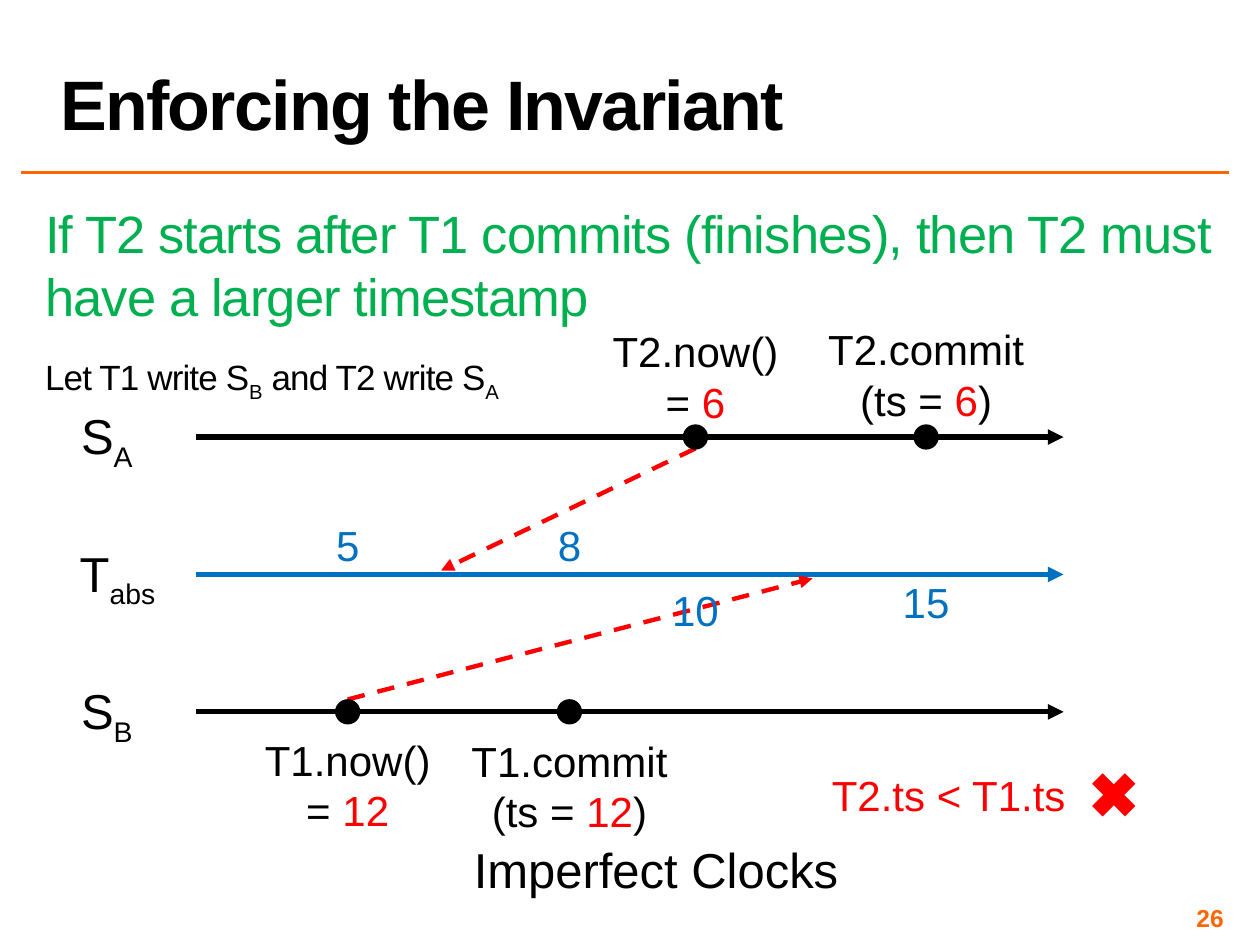
from lxml.etree import SubElement
from pptx import Presentation
from pptx.dml.color import RGBColor
from pptx.enum.dml import MSO_LINE
from pptx.enum.shapes import MSO_CONNECTOR, MSO_SHAPE
from pptx.enum.text import MSO_ANCHOR, PP_ALIGN
from pptx.oxml.ns import qn
from pptx.util import Cm, Pt

BLACK, RED, BLUE, GREEN, ORANGE = "000000", "FF0000", "0070C0", "00B050", "FF6600"
INSET = 0.1


def rgb(value):
    return RGBColor.from_string(value)


def add_text(slide, box, paragraphs, size, color=BLACK, align=PP_ALIGN.CENTER,
             wrap=False, bold=False, tracking=0, anchor=MSO_ANCHOR.TOP, inset=None):
    """Each paragraph is a list of runs: (text, colour or None, is subscript)."""
    frame = slide.shapes.add_textbox(*map(Cm, box)).text_frame
    frame.word_wrap = wrap
    frame.vertical_anchor = anchor
    if inset is not None:
        frame.margin_left = frame.margin_right = Cm(inset)
        frame.margin_top = frame.margin_bottom = Cm(inset)
    for index, pieces in enumerate(paragraphs):
        paragraph = frame.add_paragraph() if index else frame.paragraphs[0]
        paragraph.alignment = align
        for words, run_color, subscript in pieces:
            run = paragraph.add_run()
            run.text = words
            run.font.name, run.font.size, run.font.bold = "Arial", Pt(size), bold
            run.font.color.rgb = rgb(run_color or color)
            properties = run._r.get_or_add_rPr()
            if subscript:
                properties.set("baseline", "-25000")
            if tracking:
                properties.set("spc", str(int(tracking * 100)))
    return frame


def plain(words):
    return [[(words, None, False)]]


def add_line(slide, start, end, color, width, arrow=False, dashed=False):
    connector = slide.shapes.add_connector(
        MSO_CONNECTOR.STRAIGHT, *map(Cm, (*start, *end)))
    connector.line.color.rgb = rgb(color)
    connector.line.width = Pt(width)
    if dashed:
        connector.line.dash_style = MSO_LINE.DASH
    if arrow:
        SubElement(connector.line._get_or_add_ln(), qn("a:tailEnd"), type="triangle")
    SubElement(connector._element.spPr, qn("a:effectLst"))


def add_solid(slide, kind, box, color):
    shape = slide.shapes.add_shape(kind, *map(Cm, box))
    shape.shadow.inherit = False
    shape.fill.solid()
    shape.fill.fore_color.rgb = rgb(color)
    shape.line.fill.background()


def build_header(slide, left, top, width, height):
    title = add_text(slide, (left, top, width, height), plain("Enforcing the Invariant"),
                     40, align=PP_ALIGN.LEFT, wrap=True, bold=True, tracking=-1,
                     anchor=MSO_ANCHOR.BOTTOM)
    title.paragraphs[0].line_spacing = 0.8
    rule_y = top + height + 0.46
    add_line(slide, (left - 0.54, rule_y), (left + width, rule_y), ORANGE, 2)


def build_statement(slide, left, top, width, height):
    invariant = ("If T2 starts after T1 commits (finishes), "
                 "then T2 must have a larger timestamp")
    writes = [("Let T1 write S", None, False), ("B", None, True),
              (" and T2 write S", None, False), ("A", None, True)]
    frame = add_text(slide, (left, top, width, height), plain(invariant) + [writes],
                     20, align=PP_ALIGN.LEFT, wrap=True, tracking=-0.5, inset=INSET)
    for paragraph, before in zip(frame.paragraphs, (30, 8)):
        paragraph.space_before, paragraph.space_after = Pt(before), Pt(8)
    lead = frame.paragraphs[0].runs[0].font
    lead.size, lead.color.rgb = Pt(30), rgb(GREEN)


def build_timelines(slide, left, top, width, height):
    server_a, absolute, server_b = (top + height * step / 2 for step in range(3))

    # Lanes with their names
    lanes = [(absolute, "T", "abs", 2.08, BLUE), (server_b, "S", "B", 1.65, BLACK),
             (server_a, "S", "A", 1.65, BLACK)]
    for y, letter, index, name_width, color in lanes:
        add_line(slide, (left, y), (left + width, y), color, 3, arrow=True)
        add_text(slide, (left - 2.63, y - 0.75, name_width, 1.45),
                 [[(letter, None, False), (index, None, True)]], 28)

    # Dashed arrows from each now() to the absolute time its clock shows
    for event_x, event_y, clock_x, clock_y in (
            (3.05, server_b - 0.25, 12.42, absolute + 0.08),
            (10.06, server_a + 0.23, 4.93, absolute - 0.08)):
        add_line(slide, (left + event_x, event_y), (left + clock_x, clock_y),
                 RED, 2.5, arrow=True, dashed=True)

    # Events: offset, lane, call, text around the timestamp, label rise, true time, its rise
    dot = 0.51
    events = [
        (3.05, server_b, "T1.now()", ("= ", "12", ""), 0.33, "5", -1.24),
        (7.52, server_b, "T1.commit", ("(ts = ", "12", ")"), 0.35, "8", -1.24),
        (10.06, server_a, "T2.now()", ("= ", "6", ""), -2.37, "10", 0.08),
        (14.71, server_a, "T2.commit", ("(ts = ", "6", ")"), -2.41, "15", -0.08),
    ]
    for offset, y, call, (before, stamp, after), rise, time, time_rise in events:
        x = left + offset
        add_solid(slide, MSO_SHAPE.OVAL, (x - dot / 2, y - dot / 2, dot, dot), BLACK)
        reading = [(before, None, False), (stamp, RED, False)]
        if after:
            reading.append((after, None, False))
        add_text(slide, (x - 2.25, y + rise, 4.5, 2.31), plain(call) + [reading], 24)
        add_text(slide, (x - 0.74, absolute + time_rise, 1.48, 1.27),
                 plain(time), 24, BLUE)


def build_verdict(slide, left, top, width, height):
    add_text(slide, (left, top, width - height, height), plain("T2.ts < T1.ts"), 24, RED)
    add_solid(slide, MSO_SHAPE.MATH_MULTIPLY,
              (left + width - height, top, height, height), RED)


def build_footer(slide, left, top, width, height):
    add_text(slide, (left, top, 7.95, 1.45), plain("Imperfect Clocks"), 28)
    page_width, page_height = 5.92, 0.58
    add_text(slide, (left + width - page_width, top + height - page_height,
                     page_width, page_height), plain("26"), 14, ORANGE,
             align=PP_ALIGN.RIGHT, wrap=True, bold=True,
             anchor=MSO_ANCHOR.MIDDLE, inset=INSET)


def main():
    presentation = Presentation()
    presentation.slide_width, presentation.slide_height = Cm(25.4), Cm(19.05)
    slide = presentation.slides.add_slide(presentation.slide_layouts[6])
    build_header(slide, 0.97, 0.05, 23.8, 2.97)
    build_statement(slide, 0.81, 3.96, 23.88, 13.18)
    build_timelines(slide, 3.96, 8.81, 17.48, 5.54)
    build_verdict(slide, 16.43, 15.39, 6.66, 1.27)
    build_footer(slide, 9.25, 16.79, 15.52, 2)
    presentation.save("out.pptx")


if __name__ == "__main__":
    main()
